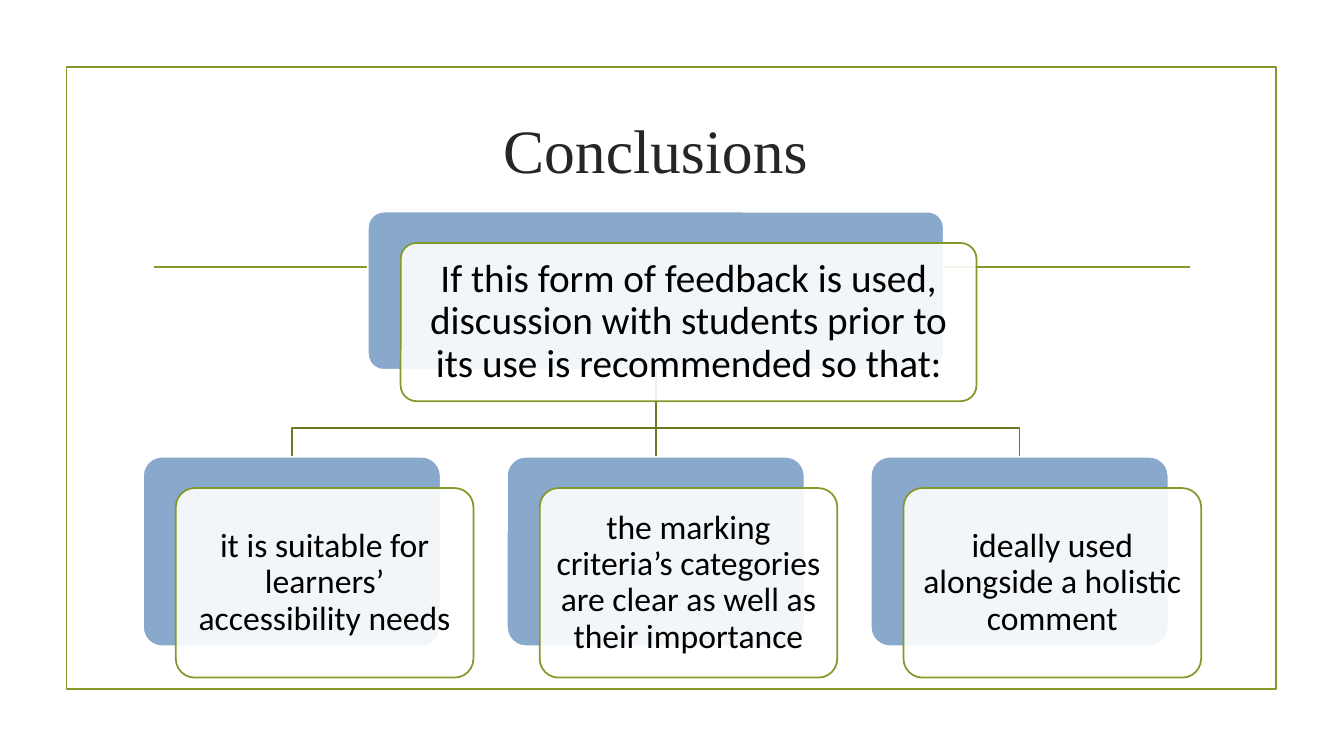
import pptx
import pptx.dml.color
import pptx.enum.shapes
import pptx.enum.text
import pptx.oxml.ns
import pptx.util
from lxml import etree

Pt = pptx.util.Pt
RGBColor = pptx.dml.color.RGBColor
MSO_SHAPE = pptx.enum.shapes.MSO_SHAPE
qn = pptx.oxml.ns.qn

GREEN = RGBColor(0x83, 0x99, 0x2A)
DARK_GREEN = RGBColor(0x69, 0x7B, 0x22)
BLUE = RGBColor(0x88, 0xA9, 0xCB)
WHITE = RGBColor(0xFF, 0xFF, 0xFF)
BLACK = RGBColor(0, 0, 0)
TITLE_GREY = RGBColor(0x26, 0x26, 0x26)

LINE_WIDTH = 1.25
CARD_DX, CARD_DY = 23.4, 22.4  # shift of the front card from its backing
ROOT_LEFT, ROOT_TOP, ROOT_WIDTH, ROOT_HEIGHT = 262.8, 151.2, 411.3, 113
REASON_LEFT, REASON_TOP, REASON_WIDTH, REASON_HEIGHT = 102.2, 326.2, 212.6, 135.4
REASON_PITCH = 259.9
BRANCH_Y = 306

ROOT_TEXT = ("If this form of feedback is used, discussion with students "
             "prior to its use is recommended so that:")
REASONS = [
    "it is suitable for learners’ accessibility needs",
    "the marking criteria’s categories are clear as well as their importance",
    "ideally used alongside a holistic comment",
]


def set_line(shape, color):
    shape.line.color.rgb = color
    shape.line.width = Pt(LINE_WIDTH)


def write_text(shape, text, font_name, size, color, inset):
    frame = shape.text_frame
    frame.word_wrap = True
    frame.vertical_anchor = pptx.enum.text.MSO_ANCHOR.MIDDLE
    frame.margin_left = frame.margin_right = Pt(inset)
    frame.margin_top = frame.margin_bottom = Pt(inset)
    frame.text = text
    paragraph = frame.paragraphs[0]
    paragraph.alignment = pptx.enum.text.PP_ALIGN.CENTER
    paragraph.font.name = font_name
    paragraph.font.size = Pt(size)
    paragraph.font.color.rgb = color
    return paragraph


def add_straight(slide, x1, y1, x2, y2, color):
    line = slide.shapes.add_connector(
        pptx.enum.shapes.MSO_CONNECTOR.STRAIGHT, Pt(x1), Pt(y1), Pt(x2), Pt(y2))
    set_line(line, color)
    etree.SubElement(line._element.spPr, qn("a:effectLst"))


def add_branch(slide, points):
    start, *rest = [(Pt(x), Pt(y)) for x, y in points]
    builder = slide.shapes.build_freeform(*start, scale=1.0)
    builder.add_line_segments(rest, close=False)
    branch = builder.convert_to_shape()
    branch.shadow.inherit = False
    branch.fill.background()
    set_line(branch, DARK_GREEN)


def add_box(slide, kind, left, top, width, height, fill, line):
    box = slide.shapes.add_shape(kind, Pt(left), Pt(top), Pt(width), Pt(height))
    box.shadow.inherit = False
    if fill is None:
        box.fill.background()
    else:
        box.fill.solid()
        box.fill.fore_color.rgb = fill
    set_line(box, line)
    return box


def add_card(slide, left, top, width, height, text, size):
    """A blue backing with a translucent white text card in front."""
    rounded = MSO_SHAPE.ROUNDED_RECTANGLE
    backing = add_box(slide, rounded, left, top, width, height, BLUE, WHITE)
    card = add_box(slide, rounded, left + CARD_DX, top + CARD_DY,
                   width, height, WHITE, GREEN)
    for box in (backing, card):
        box.adjustments[0] = 0.1
    white = card._element.spPr.find(qn("a:solidFill"))[0]
    etree.SubElement(white, qn("a:alpha"), val="90000")
    paragraph = write_text(card, text, "Calibri", size, BLACK, size * 0.3)
    paragraph.line_spacing = 0.9


def main():
    deck = pptx.Presentation()
    deck.slide_width, deck.slide_height = Pt(960), Pt(540)
    slide = deck.slides.add_slide(deck.slide_layouts[6])

    # Frame, rule and title
    add_box(slide, MSO_SHAPE.RECTANGLE, 47.6, 48, 864, 444.2, None, GREEN)
    add_straight(slide, 110.2, 190.8, 850.3, 190.8, GREEN)
    title = slide.shapes.add_textbox(Pt(95.8), Pt(54.7), Pt(745), Pt(103))
    write_text(title, "Conclusions", "Times New Roman", 44, TITLE_GREY, 3.6)

    # Branches from the root to each reason
    root_x = ROOT_LEFT + ROOT_WIDTH / 2
    root_bottom = ROOT_TOP + ROOT_HEIGHT
    reason_lefts = [REASON_LEFT + i * REASON_PITCH for i in range(len(REASONS))]
    left_x, _, right_x = [left + REASON_WIDTH / 2 for left in reason_lefts]
    for x in (right_x, left_x):
        add_branch(slide, [(root_x, root_bottom), (root_x, BRANCH_Y),
                           (x, BRANCH_Y), (x, REASON_TOP)])
    add_straight(slide, root_x, root_bottom, root_x, REASON_TOP, DARK_GREEN)

    # Cards
    add_card(slide, ROOT_LEFT, ROOT_TOP, ROOT_WIDTH, ROOT_HEIGHT, ROOT_TEXT, 28)
    for left, reason in zip(reason_lefts, REASONS):
        add_card(slide, left, REASON_TOP, REASON_WIDTH, REASON_HEIGHT, reason, 24)

    deck.save("out.pptx")


if __name__ == "__main__":
    main()
